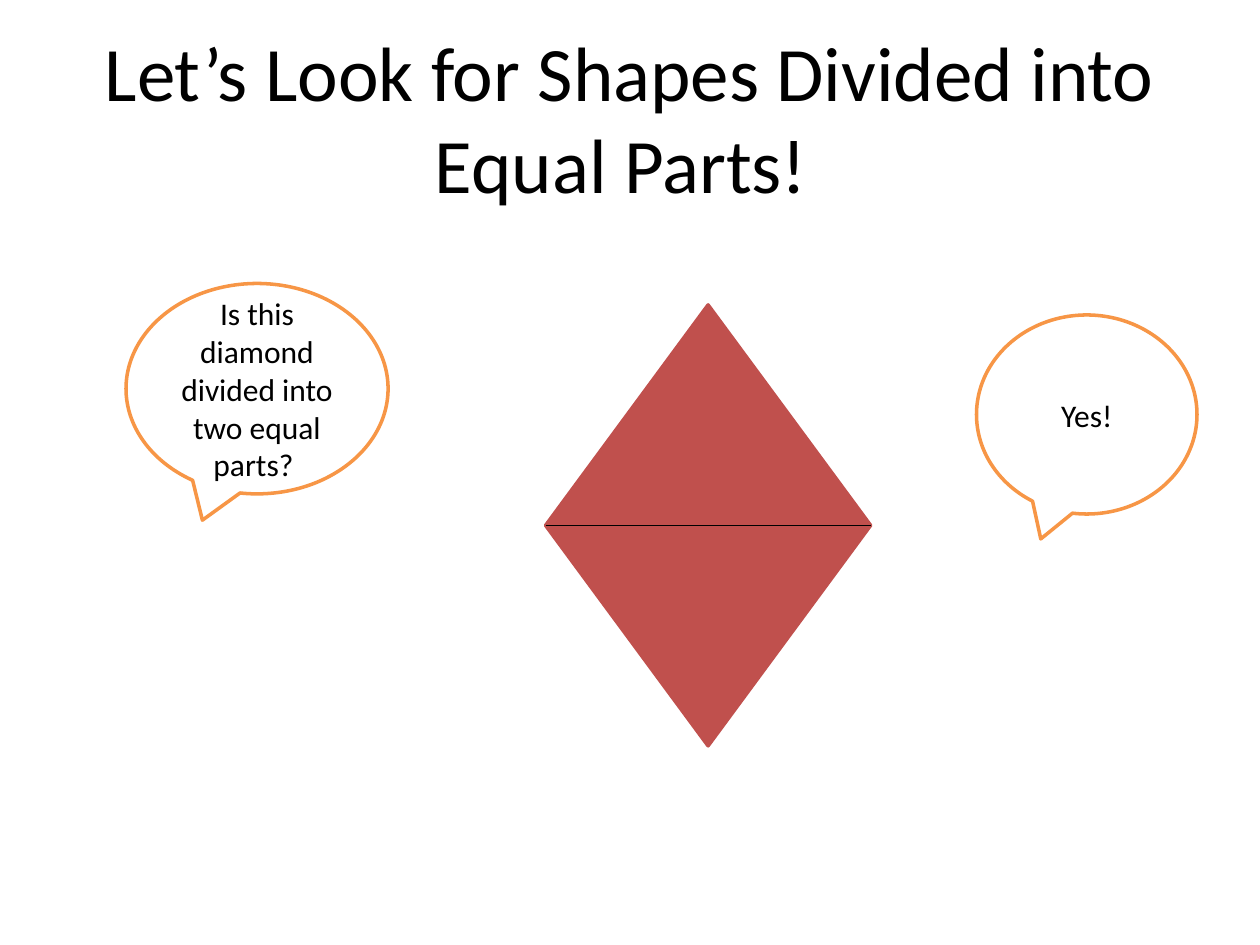
from collections import namedtuple
from dataclasses import dataclass

from pptx import Presentation
from pptx.dml.color import RGBColor
from pptx.enum.shapes import MSO_CONNECTOR as Connector, MSO_SHAPE as Shape
from pptx.enum.text import MSO_ANCHOR as Anchor, PP_ALIGN as Align
from pptx.oxml.ns import qn
from pptx.util import Inches, Pt
from lxml.etree import SubElement

Box = namedtuple("Box", "left top width height")


@dataclass(frozen=True)
class Theme:
    font: str = "Calibri"
    title_size: float = 44
    speech_size: float = 18
    outline: float = 2
    divider: float = 0.75
    ink: RGBColor = RGBColor(0x00, 0x00, 0x00)
    paper: RGBColor = RGBColor(0xFF, 0xFF, 0xFF)
    bubble: RGBColor = RGBColor(0xF7, 0x96, 0x46)
    diamond: RGBColor = RGBColor(0xC0, 0x50, 0x4D)


THEME = Theme()


def in_inches(box):
    return [Inches(length) for length in box]


def write_text(shape, text, size):
    frame = shape.text_frame
    frame.word_wrap = True
    frame.vertical_anchor = Anchor.MIDDLE
    paragraph = frame.paragraphs[0]
    paragraph.text = text
    paragraph.alignment = Align.CENTER
    paragraph.font.name = THEME.font
    paragraph.font.size = Pt(size)
    paragraph.font.color.rgb = THEME.ink


def add_outlined(slide, kind, box, fill, line):
    shape = slide.shapes.add_shape(kind, *in_inches(box))
    shape.shadow.inherit = False
    shape.fill.solid()
    shape.fill.fore_color.rgb = fill
    shape.line.color.rgb = line
    shape.line.width = Pt(THEME.outline)
    return shape


def add_title(slide, box, text):
    write_text(slide.shapes.add_textbox(*in_inches(box)), text, THEME.title_size)


def add_speech_bubble(slide, box, text):
    bubble = add_outlined(slide, Shape.OVAL_CALLOUT, box, THEME.paper, THEME.bubble)
    write_text(bubble, text, THEME.speech_size)


def add_halved_diamond(slide, box):
    diamond = add_outlined(slide, Shape.DIAMOND, box, THEME.diamond, THEME.diamond)
    # Dividing line from the left corner to the right corner
    middle = box.top + box.height / 2
    divider = slide.shapes.add_connector(
        Connector.STRAIGHT, Inches(box.left), Inches(middle),
        Inches(box.left + box.width), Inches(middle))
    divider.begin_connect(diamond, 1)
    divider.end_connect(diamond, 3)
    divider.line.color.rgb = THEME.ink
    divider.line.width = Pt(THEME.divider)
    SubElement(divider.element.spPr, qn("a:effectLst"))


def main():
    presentation = Presentation()
    presentation.slide_width, presentation.slide_height = Inches(10), Inches(7.5)
    slide = presentation.slides.add_slide(presentation.slide_layouts[6])

    # Heading
    add_title(slide, Box(0.5, 0.3, 9, 1.25),
              "Let’s Look for Shapes Divided into Equal Parts! ")
    # Answer and question
    add_speech_bubble(slide, Box(7.75, 2.5, 1.75, 1.58), "Yes!")
    add_speech_bubble(slide, Box(1, 2.25, 2.08, 1.67),
                      "Is this diamond divided into two equal parts? ")
    # Diamond in two equal parts
    add_halved_diamond(slide, Box(4.33, 2.42, 2.58, 3.5))

    presentation.save("out.pptx")


if __name__ == "__main__":
    main()
